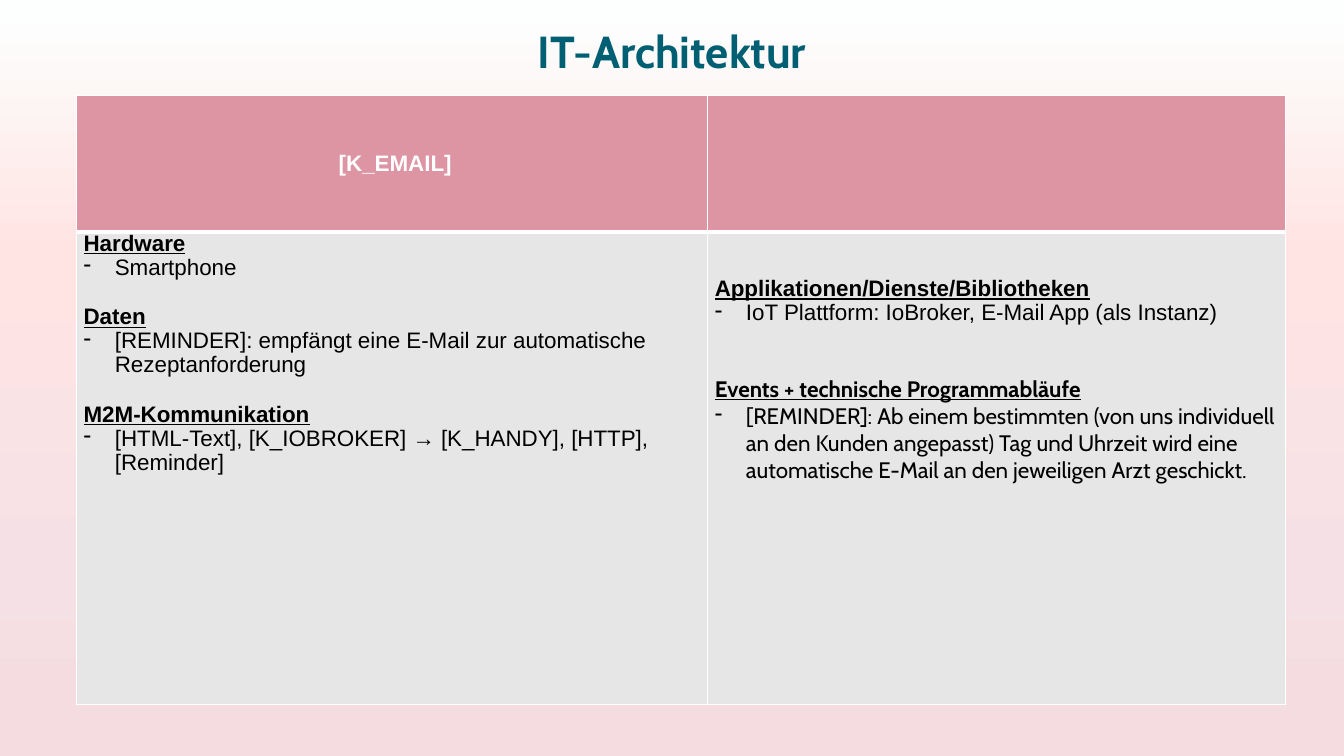
from dataclasses import dataclass

from lxml import etree
from pptx import Presentation
from pptx import util as u
from pptx.dml.color import RGBColor
from pptx.enum import text
from pptx.oxml.ns import qn

SLIDE_WIDTH, SLIDE_HEIGHT = u.Inches(13.33), u.Inches(7.5)
COLUMN, ROW = SLIDE_WIDTH / 100, SLIDE_HEIGHT / 100
INDENT = u.Inches(0.31)
BACKGROUND = [(8, "F4DCE0"), (23, "F5E1E5"), (66, "FFE4E3"), (99, "FCFFFE")]
WHITE, BLACK, TEAL, ROSE, GREY = "FFFFFF", "000000", "005F73", "DD95A3", "E7E6E6"
LINE_SPACING = {"Arial": 0.97, "Cabin": 1.0}


@dataclass
class Section:
    heading: str
    item: str
    gap: float = 0
    font: str = "Arial"


@dataclass
class Column:
    width: float
    title: str
    top_margin: float
    sections: list[Section]


COLUMNS = [
    Column(46.96, " [K_EMAIL]", 0, [
        Section("Hardware", "Smartphone"),
        Section("Daten", "[REMINDER]: empfängt eine E-Mail zur automatische "
                "Rezeptanforderung", 18),
        Section("M2M-Kommunikation",
                "[HTML-Text], [K_IOBROKER] → [K_HANDY], [HTTP], [Reminder]", 18),
    ]),
    Column(42.98, "", 6, [
        Section("Applikationen/Dienste/Bibliotheken",
                "IoT Plattform: IoBroker, E-Mail App (als Instanz)"),
        Section("Events + technische Programmabläufe",
                "[REMINDER]: Ab einem bestimmten (von uns individuell an den Kunden "
                "angepasst) Tag und Uhrzeit wird eine automatische E-Mail an den "
                "jeweiligen Arzt geschickt.", 36, "Cabin"),
    ]),
]
ROW_HEIGHTS = [18, 62.53]


def across(columns: float) -> int:
    return round(columns * COLUMN)


def down(rows: float) -> int:
    return round(rows * ROW)


def colour(value: str) -> RGBColor:
    return RGBColor.from_string(value)


def write(para, words: str, shade: str, **formats) -> None:
    span = para.add_run()
    span.text = words
    span.font.color.rgb = colour(shade)
    for name, value in formats.items():
        setattr(span.font, name, value)


def paint_background(page) -> None:
    fill = page.background.fill
    fill.gradient()
    fill.gradient_angle = 90
    stops = page.element.xpath(".//p:bg//a:gsLst")[0]
    for stop in list(stops):
        stops.remove(stop)
    for position, shade in BACKGROUND:
        stop = etree.SubElement(stops, qn("a:gs"), pos=str(position * 1000))
        etree.SubElement(stop, qn("a:srgbClr"), val=shade)


def add_title(page, words: str) -> None:
    box = page.shapes.add_textbox(across(15.83), down(1.33), across(68.34), down(9.6))
    frame = box.text_frame
    frame.word_wrap = True
    frame.vertical_anchor = text.MSO_ANCHOR.BOTTOM
    para = frame.paragraphs[0]
    para.alignment = text.PP_ALIGN.CENTER
    write(para, words, TEAL, name="Cabin", size=u.Pt(32), bold=True)


def add_bullet(para) -> None:
    properties = para._p.get_or_add_pPr()
    properties.set("marL", str(INDENT))
    properties.set("indent", str(-INDENT))
    etree.SubElement(properties, qn("a:buFontTx"))
    etree.SubElement(properties, qn("a:buChar"), char="-")


def style_cell(cell, fill: str, edges: dict[str, float]) -> None:
    properties = cell._tc.get_or_add_tcPr()
    for side, width in edges.items():
        edge = etree.SubElement(properties, qn(f"a:ln{side}"), w=str(u.Pt(width)))
        solid = etree.SubElement(edge, qn("a:solidFill"))
        etree.SubElement(solid, qn("a:srgbClr"), val=WHITE)
    cell.fill.solid()
    cell.fill.fore_color.rgb = colour(fill)
    formats = {"margin_left": u.Inches(0.07), "margin_right": u.Inches(0.07),
               "margin_top": 0, "margin_bottom": 0}
    for name, value in formats.items():
        setattr(cell, name, value)


def fill_header(cell, title: str) -> None:
    style_cell(cell, ROSE, {"L": 1, "R": 1, "T": 1, "B": 3})
    cell.vertical_anchor = text.MSO_ANCHOR.MIDDLE
    if title:
        para = cell.text_frame.paragraphs[0]
        para.alignment = text.PP_ALIGN.CENTER
        write(para, title, WHITE, name="Arial", size=u.Pt(16), bold=True)


def fill_body(cell, column: Column) -> None:
    style_cell(cell, GREY, {"L": 1, "R": 1, "T": 3, "B": 1})
    cell.vertical_anchor = text.MSO_ANCHOR.TOP
    cell.margin_top = down(column.top_margin)
    frame = cell.text_frame
    for number, section in enumerate(column.sections):
        heading = frame.add_paragraph() if number else frame.paragraphs[0]
        item = frame.add_paragraph()
        for para in (heading, item):
            para.line_spacing = LINE_SPACING[section.font]
        if section.gap:
            heading.space_before = u.Pt(section.gap)
        add_bullet(item)
        formats = {"name": section.font, "size": u.Pt(16)}
        write(heading, section.heading, BLACK, bold=True, underline=True, **formats)
        write(item, section.item, BLACK, bold=False, **formats)


def add_architecture_table(page) -> None:
    width = sum(column.width for column in COLUMNS)
    frame = page.shapes.add_table(len(ROW_HEIGHTS), len(COLUMNS), across(5.7),
                                  down(12.67), across(width), down(sum(ROW_HEIGHTS)))
    table = frame.table
    table.first_row = table.horz_banding = False
    for row, height in zip(table.rows, ROW_HEIGHTS):
        row.height = down(height)
    for index, column in enumerate(COLUMNS):
        table.columns[index].width = across(column.width)
        fill_header(table.cell(0, index), column.title)
        fill_body(table.cell(1, index), column)


def main() -> None:
    deck = Presentation()
    deck.slide_width, deck.slide_height = SLIDE_WIDTH, SLIDE_HEIGHT
    page = deck.slides.add_slide(deck.slide_layouts[6])
    paint_background(page)
    add_title(page, "IT-Architektur")
    add_architecture_table(page)
    deck.save("out.pptx")


if __name__ == "__main__":
    main()
